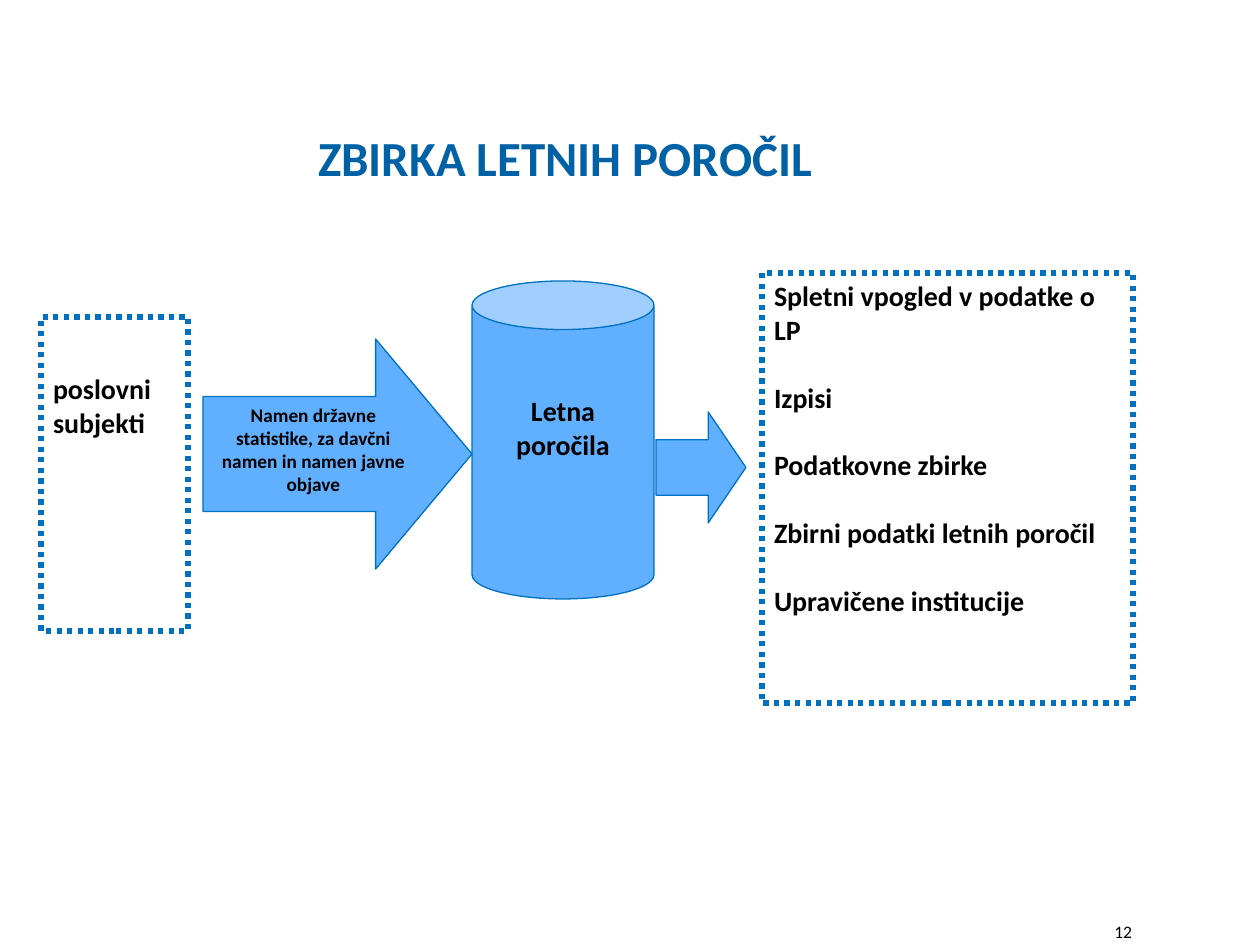
import pptx
import pptx.util
import pptx.dml.color
import pptx.enum.dml
import pptx.enum.shapes
import pptx.enum.text

EMU_PER_PX = 914400 / 126
FONT = "Calibri"
BLACK = pptx.dml.color.RGBColor(0x00, 0x00, 0x00)
SKY = pptx.dml.color.RGBColor(0x61, 0xB0, 0xFF)
BLUE = pptx.dml.color.RGBColor(0x00, 0x70, 0xC0)
TITLE_BLUE = pptx.dml.color.RGBColor(0x00, 0x61, 0xA5)

SHAPE = pptx.enum.shapes.MSO_SHAPE
ALIGN = pptx.enum.text.PP_ALIGN
ANCHOR = pptx.enum.text.MSO_ANCHOR
ARROW_ADJUSTMENTS = (0.5, 0.419)
OUTPUTS = (
    "Spletni vpogled v podatke o LP",
    "Izpisi",
    "Podatkovne zbirke",
    "Zbirni podatki letnih poročil",
    "Upravičene institucije",
)


def px(length):
    return pptx.util.Emu(round(length * EMU_PER_PX))


def write(box, texts, size, color=BLACK, bold=True, align=ALIGN.LEFT,
          anchor=ANCHOR.TOP, top=6, bottom=6, gap=0):
    frame = box.text_frame
    frame.word_wrap = True
    frame.auto_size = pptx.enum.text.MSO_AUTO_SIZE.NONE
    frame.vertical_anchor = anchor
    frame.margin_left = frame.margin_right = px(12)
    frame.margin_top, frame.margin_bottom = px(top), px(bottom)
    for index, text in enumerate(texts):
        para = frame.add_paragraph() if index else frame.paragraphs[0]
        para.alignment = align
        para.space_before = pptx.util.Pt(gap if index else 0)
        span = para.add_run()
        span.text = text
        span.font.name = FONT
        span.font.size = pptx.util.Pt(size)
        span.font.bold = bold
        span.font.color.rgb = color


def add_title(page, text, bounds):
    title = page.shapes.title
    title.left, title.top, title.width, title.height = map(px, bounds)
    write(title, [text], 28, TITLE_BLUE, anchor=ANCHOR.MIDDLE)


def add_outlined(page, kind, bounds, weight):
    shape = page.shapes.add_shape(kind, *map(px, bounds))
    shape.shadow.inherit = False
    shape.line.color.rgb = BLUE
    shape.line.width = pptx.util.Pt(weight)
    return shape


def add_solid(page, kind, bounds, adjustments):
    shape = add_outlined(page, kind, bounds, 0.75)
    shape.fill.solid()
    shape.fill.fore_color.rgb = SKY
    for index, value in enumerate(adjustments):
        shape.adjustments[index] = value
    return shape


def add_dotted_box(page, bounds, texts, top=6, gap=0):
    box = add_outlined(page, SHAPE.RECTANGLE, bounds, 3)
    box.fill.background()
    box.line.dash_style = pptx.enum.dml.MSO_LINE.ROUND_DOT
    write(box, texts, 16, top=top, gap=gap)


def add_page_number(page, number, bounds):
    box = page.shapes.add_textbox(*map(px, bounds))
    write(box, [number], 10, bold=False, align=ALIGN.RIGHT, anchor=ANCHOR.MIDDLE, bottom=0)


def main():
    deck = pptx.Presentation()
    deck.slide_width, deck.slide_height = px(1260), px(945)
    page = deck.slides.add_slide(deck.slide_layouts[5])

    add_title(page, "ZBIRKA LETNIH POROČIL", (306, 121, 644, 72))
    reports = add_solid(page, SHAPE.CAN, (472, 281, 182, 318), (0.267,))
    write(reports, ["Letna poročila"], 16, align=ALIGN.CENTER, top=64)
    purpose = add_solid(page, SHAPE.RIGHT_ARROW, (203, 339, 269, 230), ARROW_ADJUSTMENTS)
    write(purpose, ["Namen državne statistike, za davčni namen in namen javne objave"],
          11, align=ALIGN.CENTER, anchor=ANCHOR.MIDDLE, bottom=15)
    add_dotted_box(page, (41, 317, 147, 314), ["poslovni subjekti"], top=55)
    add_dotted_box(page, (762, 273, 371, 430), OUTPUTS, gap=19.5)
    add_solid(page, SHAPE.RIGHT_ARROW, (656, 412, 90, 111), ARROW_ADJUSTMENTS)
    add_page_number(page, "12", (955, 913, 189, 32))

    deck.save("out.pptx")


if __name__ == "__main__":
    main()
